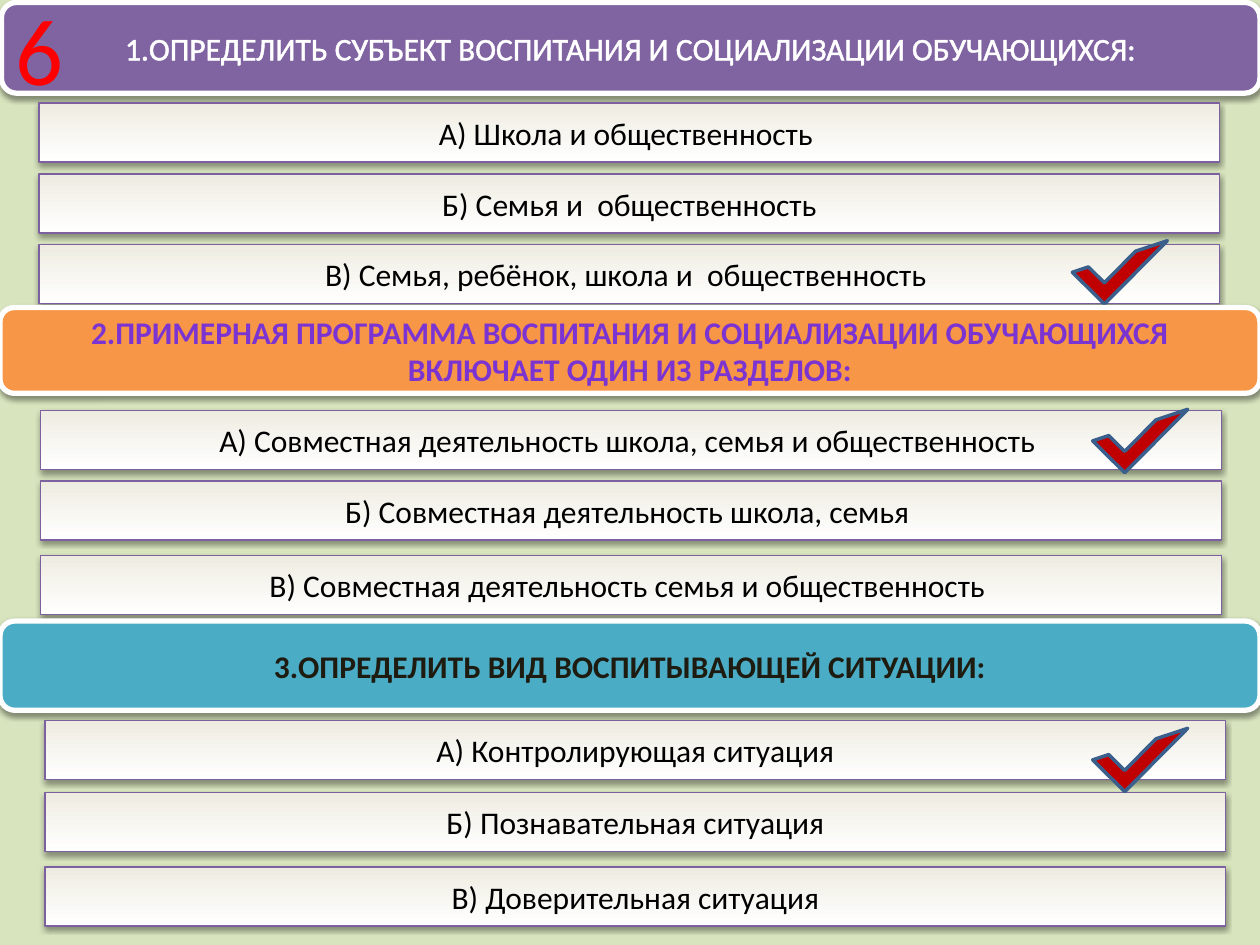
from lxml import etree
from pptx import Presentation
from pptx.dml.color import RGBColor
from pptx.enum.shapes import MSO_SHAPE
from pptx.enum.text import MSO_ANCHOR, MSO_AUTO_SIZE, PP_ALIGN
from pptx.oxml import parse_xml
from pptx.oxml.ns import nsdecls, qn
from pptx.util import Cm, Pt

RECT, ROUND, CHECK = MSO_SHAPE.RECTANGLE, MSO_SHAPE.ROUNDED_RECTANGLE, MSO_SHAPE.HALF_FRAME
MIDDLE, CENTER, GROW = MSO_ANCHOR.MIDDLE, PP_ALIGN.CENTER, MSO_AUTO_SIZE.SHAPE_TO_FIT_TEXT
FONT = "Calibri"
COLORS = {
    "background": "D7E4BD", "white": "FFFFFF", "black": "000000",
    "purple": "8064A2", "orange": "F79646", "teal": "4BACC6",
    "answer_line": "7D60A0", "check": "C00000", "check_line": "3A5F8C",
    "ink": "1E1C11", "outline": "5E457C", "number": "FF0000",
}
ANSWER_STOPS = [(0, "FFFFFF"), (100, "EEECE1"), (100, "F0EAF9")]
VIOLET_STOPS = [(0, "3D1B67"), (43, "7B34D2"), (48, "7330C4"), (100, "3D1B67")]
ANSWER_W, ANSWER_H = 23.8, 1.19

SECTIONS = [
    dict(box=(0.03, 0.05, 25.37, 1.83), fill="purple", ink="white",
         bold=False, outline=("white", 1.45),
         title="1.ОПРЕДЕЛИТЬ СУБЪЕКТ ВОСПИТАНИЯ И СОЦИАЛИЗАЦИИ ОБУЧАЮЩИХСЯ:",
         indent=0.76, check=(22.09, 4.22),
         answers=[(2.03, "А) Школа и общественность "),
                  (3.46, "Б) Семья и  общественность"),
                  (4.88, "В) Семья, ребёнок, школа и  общественность ")]),
    dict(box=(0, 6.2, 25.4, 1.73), fill="orange", ink=VIOLET_STOPS,
         bold=True, outline=("outline", 0.71),
         title="2.ПРИМЕРНАЯ ПРОГРАММА ВОСПИТАНИЯ И СОЦИАЛИЗАЦИИ ОБУЧАЮЩИХСЯ "
               "ВКЛЮЧАЕТ ОДИН ИЗ РАЗДЕЛОВ:",
         indent=0.82, check=(22.53, 1.47),
         answers=[(2.08, "А) Совместная деятельность школа, семья и общественность "),
                  (3.5, "Б) Совместная деятельность школа, семья "),
                  (5.0, "В) Совместная деятельность семья и общественность ")]),
    dict(box=(0, 12.52, 25.4, 1.8), fill="teal", ink="ink",
         bold=True, outline=("outline", 0.71),
         title="3.ОПРЕДЕЛИТЬ ВИД ВОСПИТЫВАЮЩЕЙ СИТУАЦИИ:",
         indent=0.91, check=(22.53, 1.58),
         answers=[(2.01, "А) Контролирующая ситуация"),
                  (3.46, "Б) Познавательная ситуация"),
                  (4.96, "В) Доверительная ситуация")]),
]


def rgb(name):
    return RGBColor.from_string(COLORS[name])


def set_fill(fill, element, paint, angle=90):
    if isinstance(paint, str):
        fill.solid()
        fill.fore_color.rgb = rgb(paint)
        return
    fill.gradient()
    grad = element.find(qn("a:gradFill"))
    stops = "".join(f'<a:gs pos="{pos * 1000}"><a:srgbClr val="{color}"/></a:gs>'
                    for pos, color in paint)
    element.replace(grad, parse_xml(
        f'<a:gradFill {nsdecls("a")} rotWithShape="1"><a:gsLst>{stops}</a:gsLst>'
        f'<a:lin ang="{angle * 60000}" scaled="0"/></a:gradFill>'))


def add_shadow(sp):
    effects = sp._element.spPr.find(qn("a:effectLst"))
    shadow = etree.SubElement(effects, qn("a:outerShdw"), blurRad="40000", dist="20000",
                              dir="5400000", rotWithShape="0")
    color = etree.SubElement(shadow, qn("a:srgbClr"), val=COLORS["black"])
    etree.SubElement(color, qn("a:alpha"), val="38000")


def add_box(s, kind, box, paint, line, width, angle=90, shadow=True):
    sp = s.shapes.add_shape(kind, *map(Cm, box))
    sp.shadow.inherit = False
    set_fill(sp.fill, sp._element.spPr, paint, angle)
    sp.line.color.rgb = rgb(line)
    sp.line.width = Pt(width)
    if shadow:
        add_shadow(sp)
    return sp


def write(sp, text, ink, size=18, bold=False, outline=None):
    tf = sp.text_frame
    tf.text = text
    p = tf.paragraphs[0]
    p.alignment = CENTER
    r = p.runs[0]
    r.font.name, r.font.size, r.font.bold = FONT, Pt(size), bold
    rPr = r._r.get_or_add_rPr()
    set_fill(r.font.fill, rPr, ink)
    if outline:
        color, width = outline
        rPr.insert(0, parse_xml(
            f'<a:ln {nsdecls("a")} w="{int(Pt(width))}"><a:solidFill>'
            f'<a:srgbClr val="{COLORS[color]}"/></a:solidFill></a:ln>'))
    return tf


def add_section(s, box, title, fill, ink, bold, outline, indent, answers, check):
    left, top = box[:2]
    sp = add_box(s, ROUND, box, fill, "white", 3)
    write(sp, title, ink, bold=bold, outline=outline).vertical_anchor = MIDDLE
    for offset, text in answers:
        sp = add_box(s, RECT, (left + indent, top + offset, ANSWER_W, ANSWER_H),
                     ANSWER_STOPS, "answer_line", 0.75, angle=270)
        write(sp, text, "black").vertical_anchor = MIDDLE
    dx, dy = check
    mark = add_box(s, CHECK, (left + dx, top + dy, 0.91, 1.8),
                   "check", "check_line", 2, shadow=False)
    mark.rotation = 224.8


def add_number(s, box, text):
    sp = s.shapes.add_textbox(*map(Cm, box))
    tf = write(sp, text, "number", size=54, outline=("white", 1.45))
    tf.word_wrap = False
    tf.auto_size = GROW


def main():
    prs = Presentation()
    prs.slide_width, prs.slide_height = Cm(25.4), Cm(19.05)
    s = prs.slides.add_slide(prs.slide_layouts[6])
    set_fill(s.background.fill, None, "background")
    for section in SECTIONS:
        add_section(s, **section)
    add_number(s, (0.05, -0.3, 1.5, 2.57), "6")
    prs.save("out.pptx")


if __name__ == "__main__":
    main()
